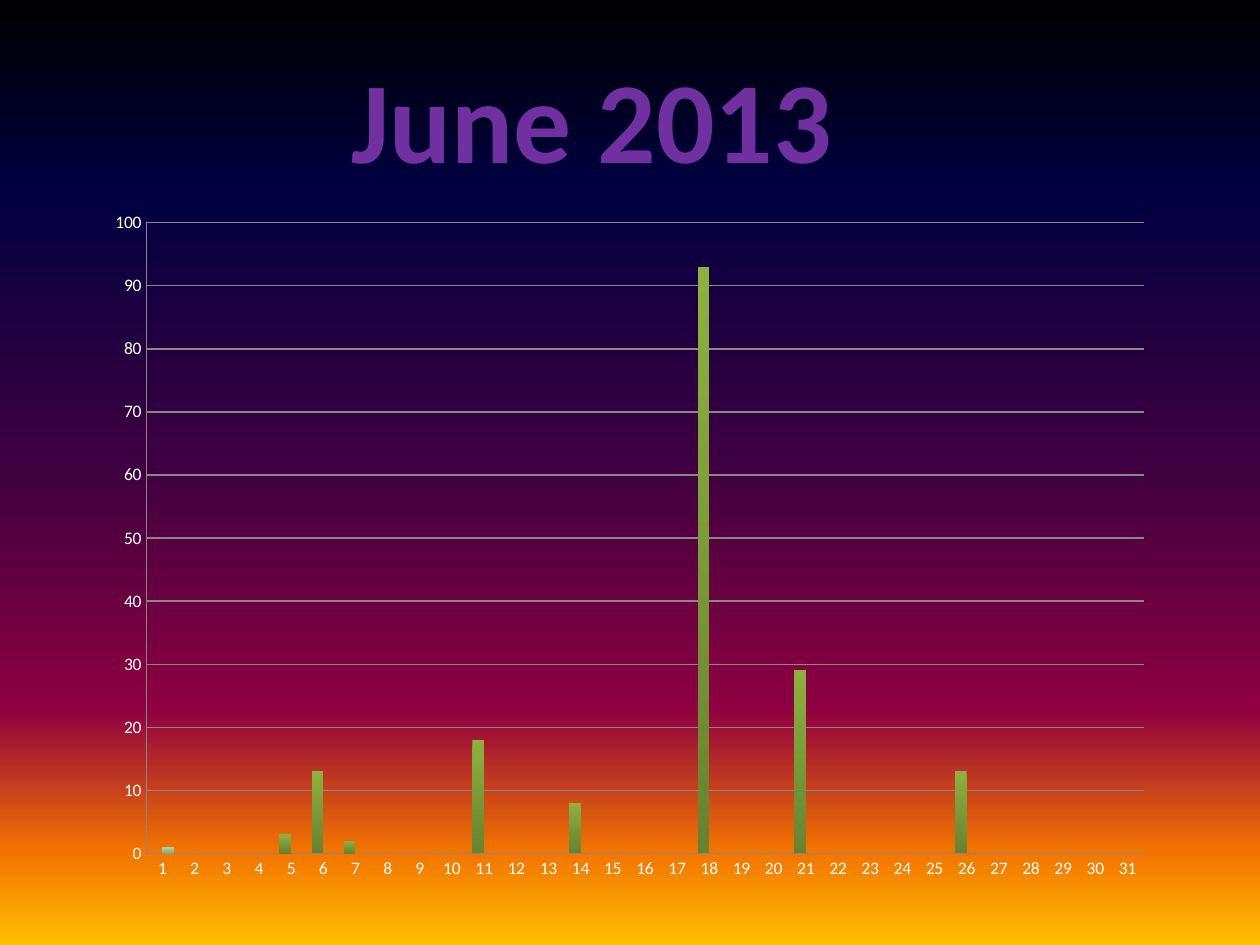
"""Build the June 2013 daily column chart slide."""
from lxml import etree
from pptx import Presentation
from pptx.chart.data import CategoryChartData
from pptx.dml.color import RGBColor
from pptx.enum.chart import XL_CHART_TYPE, XL_TICK_MARK
from pptx.enum.text import MSO_AUTO_SIZE, PP_ALIGN
from pptx.oxml.ns import qn
from pptx.util import Pt

COLUMNS = XL_CHART_TYPE.COLUMN_CLUSTERED
NO_TICKS = XL_TICK_MARK.NONE
CENTER = PP_ALIGN.CENTER
GROW = MSO_AUTO_SIZE.SHAPE_TO_FIT_TEXT

WHITE = RGBColor(0xFF, 0xFF, 0xFF)
PURPLE = RGBColor(0x70, 0x30, 0xA0)
GRAY = RGBColor(0x88, 0x88, 0x88)
FONT = "Calibri"

TITLE = "June 2013"
DAYS = range(1, 32)
SUNSET = [(0, "000000"), (20, "000040"), (50, "400040"),
          (75, "8F0040"), (90, "F27300"), (100, "FFBF00")]
SERIES = [
    ("Series 1", {5: 3, 6: 13, 7: 2, 11: 18, 14: 8, 18: 93, 21: 29, 26: 13}, 0,
     [(0, "8DB040"), (100, "67832F")]),
    ("Series 2", {1: 1}, None, [(0, "B5D3A0"), (100, "85A878")]),
]

SLIDE_SIZE = (1260, 945)
TITLE_BOX = (336, 42, 512, 152)
CHART_BOX = (94, 199, 1071, 693)


def px(length):
    return round(length * 914400 / 126)


def fill_downward(fill, element, stops):
    fill.gradient()
    fill.gradient_angle = 270
    stop_list = next(element.iter(qn("a:gsLst")))
    for stop in list(stop_list):
        stop_list.remove(stop)
    for position, color in stops:
        stop = etree.SubElement(stop_list, qn("a:gs"), pos=str(position * 1000))
        etree.SubElement(stop, qn("a:srgbClr"), val=color)


def add_title(slide):
    title = slide.shapes.add_textbox(*map(px, TITLE_BOX))
    frame = title.text_frame
    frame.word_wrap = False
    frame.auto_size = GROW
    paragraph = frame.paragraphs[0]
    paragraph.text = TITLE
    paragraph.alignment = CENTER
    font = paragraph.font
    font.name, font.size, font.bold = FONT, Pt(66), True
    font.color.rgb = PURPLE
    properties = next(title.element.iter(qn("a:defRPr")))
    outline = etree.Element(qn("a:ln"), w=str(Pt(1.4)))
    outline_fill = etree.SubElement(outline, qn("a:solidFill"))
    etree.SubElement(outline_fill, qn("a:srgbClr"), val=str(WHITE))
    properties.insert(0, outline)


def add_daily_chart(slide):
    data = CategoryChartData()
    data.categories = [str(day) for day in DAYS]
    for name, counts, missing, _ in SERIES:
        data.add_series(name, [counts.get(day, missing) for day in DAYS])
    chart = slide.shapes.add_chart(COLUMNS, *map(px, CHART_BOX), data).chart
    chart.has_title = False
    chart.has_legend = False
    chart.font.name, chart.font.size = FONT, Pt(10)
    chart.font.color.rgb = WHITE

    plot = chart.plots[0]
    plot.gap_width = 75
    plot.overlap = 0
    plot.vary_by_categories = False
    for series, (_, _, _, stops) in zip(plot.series, SERIES):
        series.invert_if_negative = False
        fill_downward(series.format.fill, series._element, stops)

    for axis in (chart.category_axis, chart.value_axis):
        axis.major_tick_mark = axis.minor_tick_mark = NO_TICKS
        axis.format.line.color.rgb = GRAY
        axis.format.line.width = Pt(0.75)
    counts_axis = chart.value_axis
    counts_axis.minimum_scale, counts_axis.maximum_scale = 0, 100
    counts_axis.major_unit = 10
    counts_axis.has_major_gridlines = True
    gridline = counts_axis.major_gridlines.format.line
    gridline.color.rgb = GRAY
    gridline.width = Pt(0.75)


def main():
    deck = Presentation()
    deck.slide_width, deck.slide_height = map(px, SLIDE_SIZE)
    slide = deck.slides.add_slide(deck.slide_layouts[6])
    fill_downward(slide.background.fill, slide.element, SUNSET)
    add_title(slide)
    add_daily_chart(slide)
    deck.save("out.pptx")


if __name__ == "__main__":
    main()
